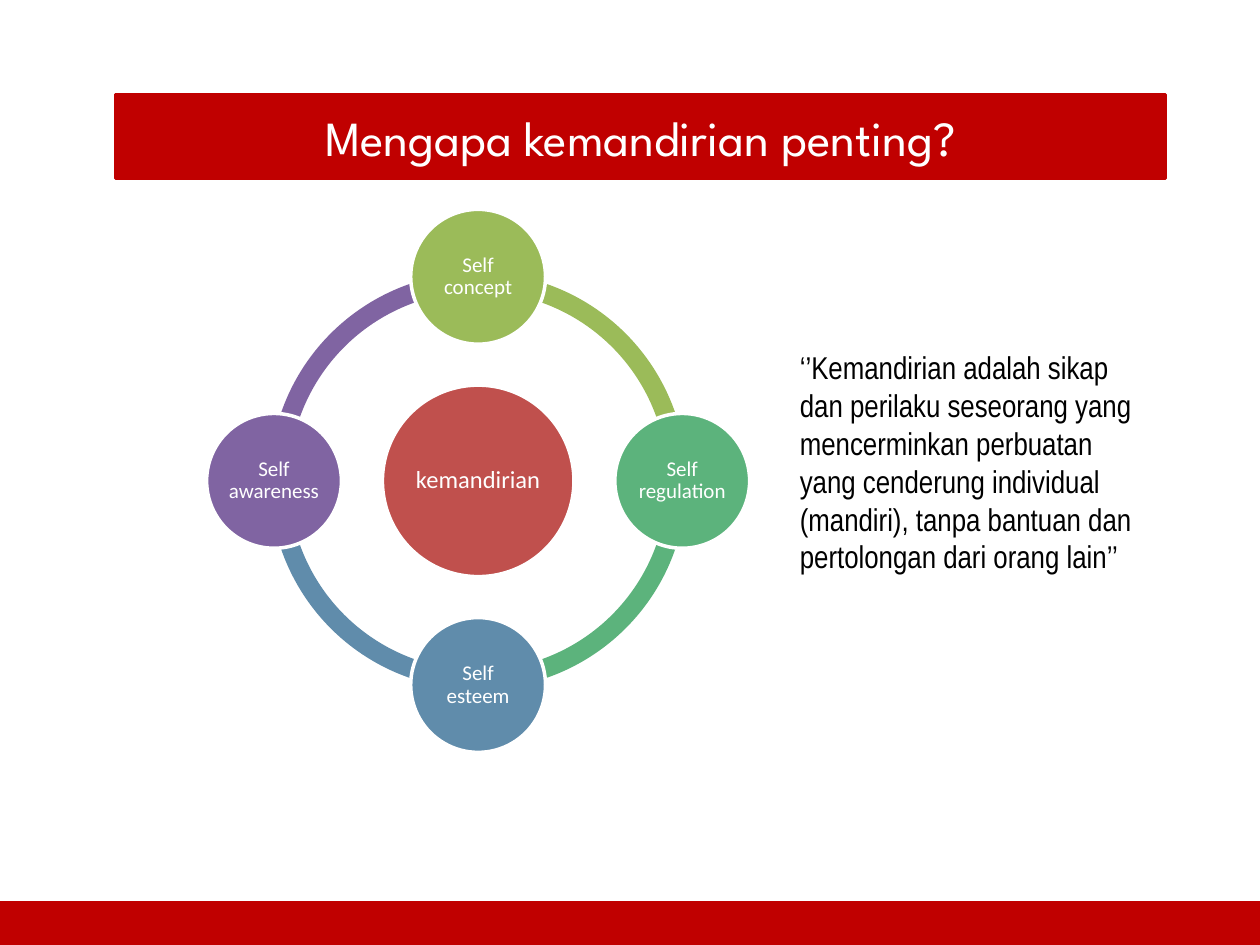
from math import cos, radians, sin

from pptx import Presentation
from pptx.dml.color import RGBColor
from pptx.enum.shapes import MSO_SHAPE
from pptx.enum.text import MSO_ANCHOR, PP_ALIGN
from pptx.util import Inches, Pt

RECTANGLE, OVAL, ARC = MSO_SHAPE.RECTANGLE, MSO_SHAPE.OVAL, MSO_SHAPE.BLOCK_ARC
MIDDLE, CENTER, LEFT = MSO_ANCHOR.MIDDLE, PP_ALIGN.CENTER, PP_ALIGN.LEFT

THEME = {
    "red": "C00000", "white": "FFFFFF", "black": "000000", "core": "C0504D",
    "title": ("League Spartan", 28), "hub": ("Calibri", 14),
    "node": ("Calibri", 12), "quote": ("Arial Narrow", 18),
}

deck = Presentation()
deck.slide_width, deck.slide_height = Inches(10), Inches(7.5)
page = deck.slides.add_slide(deck.slide_layouts[6])
CELL = deck.slide_width / 120  # grid of 120 columns by 90 rows


def add_block(kind, left, top, width, height, fill, line=None):
    """Add a filled preset shape placed in grid cells."""
    block = page.shapes.add_shape(
        kind, *(round(cells * CELL) for cells in (left, top, width, height)))
    block.shadow.inherit = False
    block.fill.solid()
    block.fill.fore_color.rgb = RGBColor.from_string(fill)
    if line:
        block.line.color.rgb = RGBColor.from_string(line)
        block.line.width = Pt(2)
    else:
        block.line.fill.background()
    return block


def write(box, text, style, color, align=CENTER, spacing=None, inset=None):
    """Write one paragraph into a shape or text box."""
    frame = box.text_frame
    frame.word_wrap = True
    if inset is not None:
        frame.margin_left = frame.margin_right = Inches(inset)
        frame.margin_top = frame.margin_bottom = Inches(inset)
    para = frame.paragraphs[0]
    para.text = text
    para.alignment = align
    para.line_spacing = spacing
    para.font.name, size = THEME[style]
    para.font.size = Pt(size)
    para.font.color.rgb = RGBColor.from_string(THEME[color])


# Footer band and title bar
add_block(RECTANGLE, 0, 86, 120, 4, THEME["red"], THEME["red"])
title = add_block(RECTANGLE, 11, 9, 100, 8, THEME["red"], THEME["red"])
title.text_frame.vertical_anchor = MIDDLE
write(title, "Mengapa kemandirian penting?", "title", "white")

# Cycle: each aspect sits at an angle, clockwise from the top
aspects = [
    ("Self concept", 270, "9BBB59"),
    ("Self regulation", 0, "5CB37C"),
    ("Self esteem", 90, "608CAB"),
    ("Self awareness", 180, "8064A2"),
]
center_x, center_y = 45.54, 45.8
ring_size, orbit, core_size, node_size = 39.72, 19.44, 18.24, 12.84

# Ring quarters, each running from its aspect to the next
DEGREE = 0.6  # one degree in adjustment units
for name, angle, color in reversed(aspects):
    arc = add_block(ARC, center_x - ring_size / 2, center_y - ring_size / 2,
                    ring_size, ring_size, color)
    arc.adjustments[0] = angle * DEGREE
    arc.adjustments[1] = (angle + 90) % 360 * DEGREE
    arc.adjustments[2] = 0.046

# Core and aspect circles
circles = [("kemandirian", center_x, center_y, core_size, THEME["core"], "hub")]
for name, angle, color in aspects:
    circles.append((name, center_x + orbit * cos(radians(angle)),
                    center_y + orbit * sin(radians(angle)),
                    node_size, color, "node"))
for name, x, y, size, color, style in circles:
    circle = add_block(OVAL, x - size / 2, y - size / 2, size, size,
                       color, THEME["white"])
    circle.text_frame.vertical_anchor = MIDDLE
    write(circle, name, style, "white", spacing=0.9, inset=0.01)

# Quotation
quote = page.shapes.add_textbox(
    *(round(cells * CELL) for cells in (75, 32.6, 36, 23)))
write(quote, "‘’Kemandirian adalah sikap dan perilaku seseorang yang "
      "mencerminkan perbuatan yang cenderung individual (mandiri), tanpa "
      "bantuan dan pertolongan dari orang lain’’", "quote", "black", LEFT)

deck.save("out.pptx")
